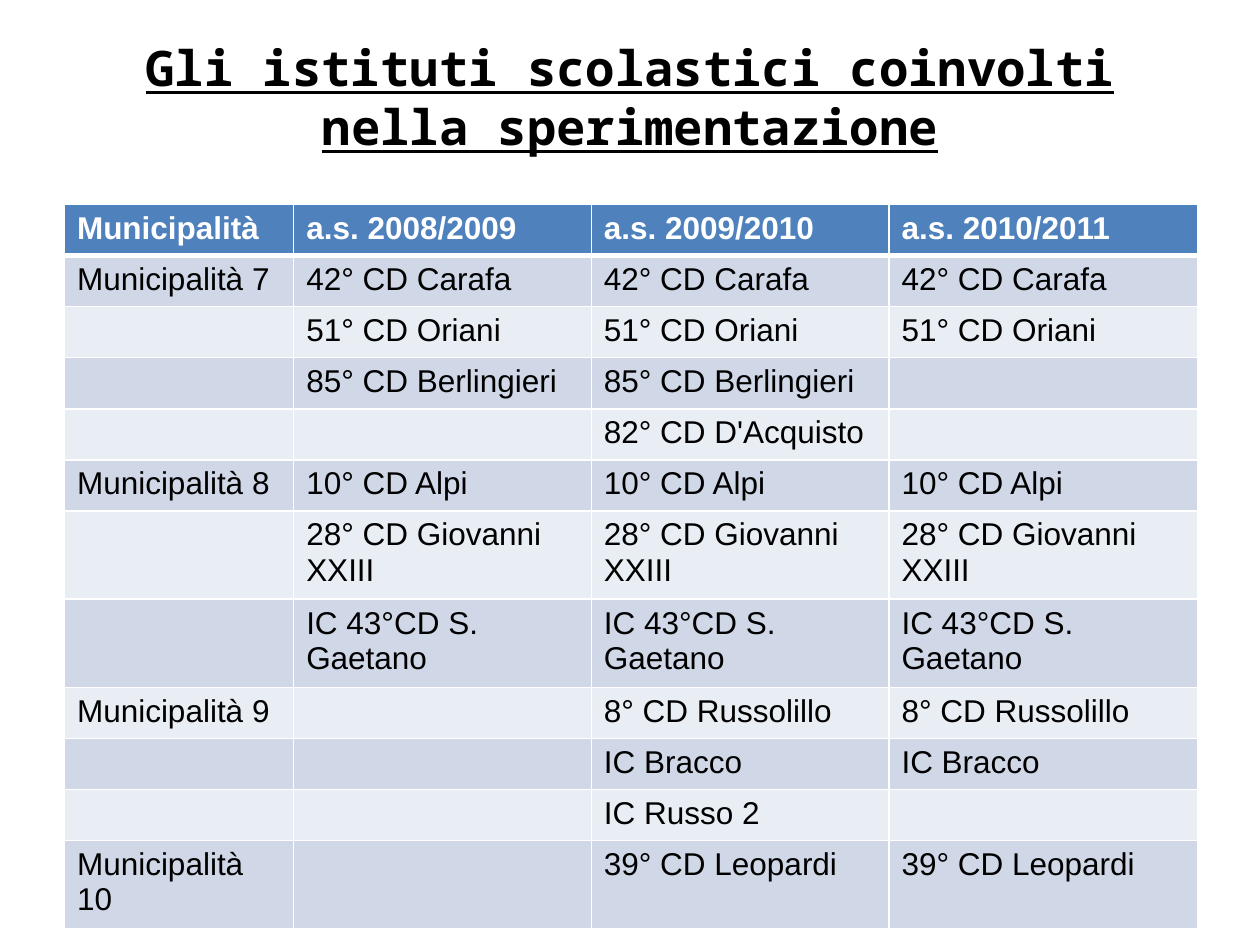
from lxml.etree import SubElement
from pptx import Presentation
from pptx.dml.color import RGBColor
from pptx.enum.text import MSO_ANCHOR, PP_ALIGN
from pptx.oxml.ns import qn
from pptx.util import Cm, Pt

BLACK = RGBColor(0x00, 0x00, 0x00)
WHITE = RGBColor(0xFF, 0xFF, 0xFF)
HEADER = RGBColor(0x4F, 0x81, 0xBD)
BAND_DARK = RGBColor(0xD0, 0xD8, 0xE8)
BAND_LIGHT = RGBColor(0xE9, 0xED, 0xF4)

ROWS = [
    ("Municipalità", "a.s. 2008/2009", "a.s. 2009/2010", "a.s. 2010/2011"),
    ("Municipalità 7", "42° CD Carafa", "42° CD Carafa", "42° CD Carafa"),
    ("", "51° CD Oriani", "51° CD Oriani", "51° CD Oriani"),
    ("", "85° CD Berlingieri", "85° CD Berlingieri", ""),
    ("", "", "82° CD D'Acquisto", ""),
    ("Municipalità 8", "10° CD Alpi", "10° CD Alpi", "10° CD Alpi"),
    ("",) + ("28° CD Giovanni XXIII",) * 3,
    ("",) + ("IC 43°CD S. Gaetano",) * 3,
    ("Municipalità 9", "", "8° CD Russolillo", "8° CD Russolillo"),
    ("", "", "IC Bracco", "IC Bracco"),
    ("", "", "IC Russo 2", ""),
    ("Municipalità 10", "", "39° CD Leopardi", "39° CD Leopardi"),
]
COL_WIDTHS = [4.62, 6, 6, 6.22]
ROW_HEIGHT = 1.03


def add_run(p, text, font, size, color, bold):
    r = p.add_run()
    r.text = text
    r.font.name = font
    r.font.size = Pt(size)
    r.font.color.rgb = color
    r.font.bold = bold
    return r


def set_borders(cell, bottom):
    tcPr = cell._tc.get_or_add_tcPr()
    widths = {"a:lnL": 1, "a:lnR": 1, "a:lnT": 1, "a:lnB": bottom}
    for i, (tag, width) in enumerate(widths.items()):
        ln = SubElement(tcPr, qn(tag), w=str(Pt(width)))
        fill = SubElement(ln, qn("a:solidFill"))
        SubElement(fill, qn("a:srgbClr"), val=str(WHITE))
        tcPr.insert(i, ln)


prs = Presentation()
prs.slide_width, prs.slide_height = Cm(25.4), Cm(19.05)
s = prs.slides.add_slide(prs.slide_layouts[6])

# Title
sp = s.shapes.add_textbox(Cm(1.27), Cm(0.76), Cm(22.86), Cm(2.36))
tf = sp.text_frame
tf.word_wrap = True
tf.vertical_anchor = MSO_ANCHOR.MIDDLE
p = tf.paragraphs[0]
p.alignment = PP_ALIGN.CENTER
r = add_run(p, "Gli istituti scolastici coinvolti nella sperimentazione",
            "Noto Sans Mono", 28, BLACK, True)
r.font.underline = True

# Table of schools by district and school year
table = s.shapes.add_table(len(ROWS), len(COL_WIDTHS), Cm(1.3), Cm(4.12),
                           Cm(sum(COL_WIDTHS)), Cm(ROW_HEIGHT * len(ROWS))).table
for col, width in zip(table.columns, COL_WIDTHS):
    col.width = Cm(width)

for i, texts in enumerate(ROWS):
    table.rows[i].height = Cm(ROW_HEIGHT)
    is_header = i == 0
    band = HEADER if is_header else BAND_DARK if i % 2 else BAND_LIGHT
    for j, text in enumerate(texts):
        cell = table.cell(i, j)
        cell.fill.solid()
        cell.fill.fore_color.rgb = band
        set_borders(cell, 3 if is_header else 1)
        p = cell.text_frame.paragraphs[0]
        if text:
            add_run(p, text, "Arial", 18, WHITE if is_header else BLACK, is_header)
        else:
            p.font.size = Pt(18)

prs.save("out.pptx")
